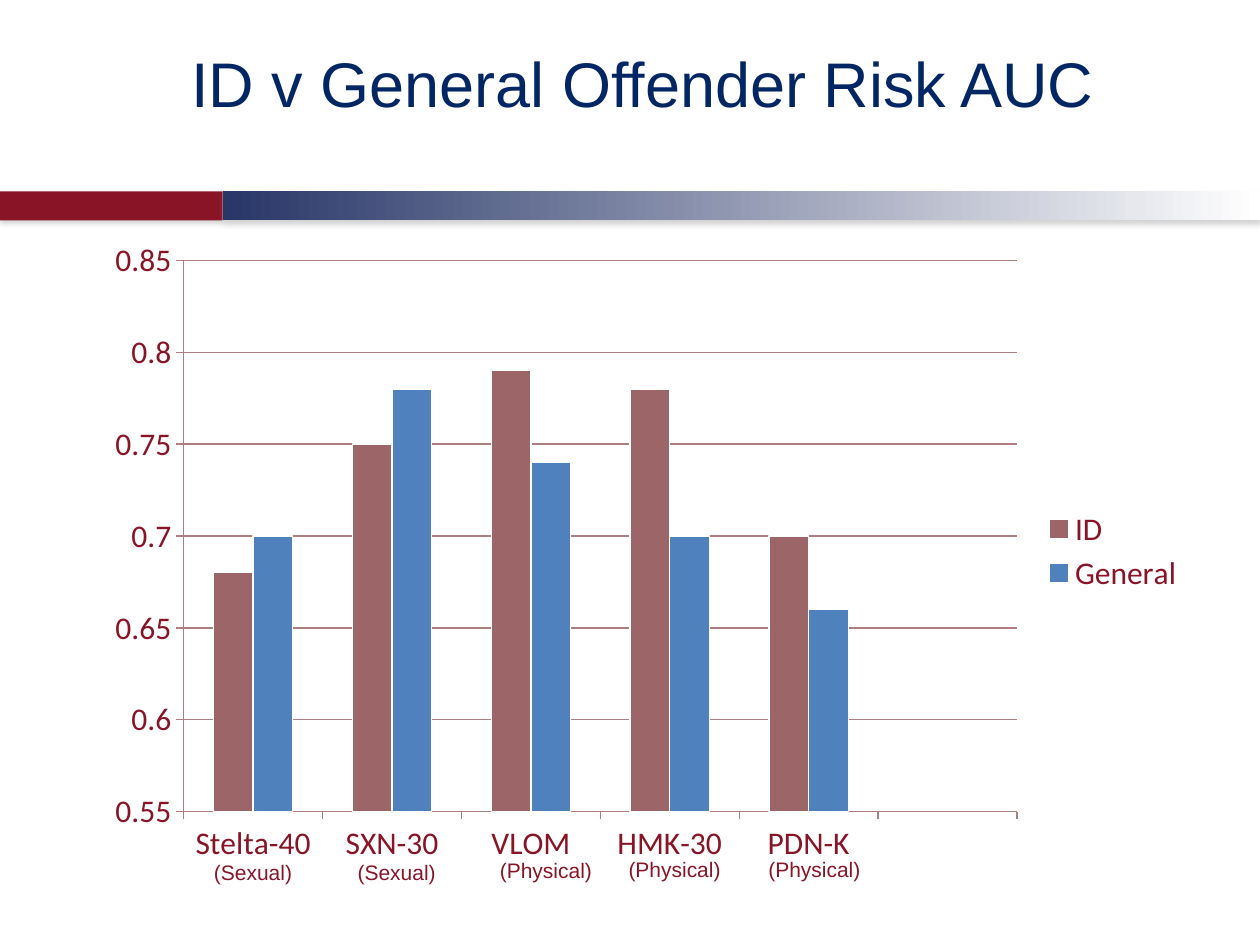
from lxml.etree import SubElement
from pptx import Presentation
from pptx.chart.data import CategoryChartData
from pptx.dml.color import RGBColor
from pptx.enum.chart import XL_CHART_TYPE, XL_LEGEND_POSITION, XL_TICK_MARK
from pptx.enum.shapes import MSO_SHAPE
from pptx.enum.text import MSO_ANCHOR, MSO_AUTO_SIZE, PP_ALIGN
from pptx.oxml.ns import qn
from pptx.util import Pt

# Content
TITLE = "ID v General Offender Risk AUC"
CATEGORIES = ["Stelta-40", "SXN-30", "VLOM", "HMK-30", "PDN-K", ""]
SERIES = [
    ("ID", "id_bar", [0.68, 0.75, 0.79, 0.78, 0.7, None]),
    ("General", "general_bar", [0.7, 0.78, 0.74, 0.7, 0.66, None]),
]
OFFENCE_NOTES = [  # text, left, top, width
    ("(Sexual)", 115.2, 487.4, 59.8),
    ("(Sexual)", 197.3, 487.4, 59.8),
    ("(Physical)", 278.6, 486.7, 67.7),
    ("(Physical)", 352.1, 486, 67.7),
    ("(Physical)", 432, 486, 67.7),
]

# Theme and geometry, in points
THEME = {
    "title": "002663", "text": "881426", "red": "891426", "navy": "283668",
    "white": "FFFFFF", "shadow": "808080", "grid": "AF7E80",
    "id_bar": "9C6567", "general_bar": "4F81BD",
    "font": "Arial", "chart_font": "Calibri",
    "title_size": 36, "chart_size": 18, "note_size": 12,
}
SLIDE_WIDTH, SLIDE_HEIGHT = 720, 540
BAND_TOP, BAND_HEIGHT, BAND_SPLIT = 109.4, 16.6, 127.2
TITLE_BOX = (36, 21.6, 662.4, 51.1)
CHART_BOX = (53.3, 130.3, 630.7, 369.4)
PLOT_AREA = {"x": 0.082, "y": 0.05, "w": 0.755, "h": 0.853}


NOTE_HEIGHT = 21.6


def color(name):
    return RGBColor.from_string(THEME[name])


def points(*lengths):
    return [Pt(length) for length in lengths]


def style_font(font, face, size, tint):
    font.name = THEME[face]
    font.size = Pt(THEME[size])
    font.color.rgb = color(tint)


def add_band(slide, left, right):
    band = slide.shapes.add_shape(
        MSO_SHAPE.RECTANGLE, *points(left, BAND_TOP, right - left, BAND_HEIGHT))
    band.line.fill.background()
    band.shadow.inherit = False
    effects = band._element.spPr.find(qn("a:effectLst"))
    shadow = SubElement(effects, qn("a:outerShdw"), blurRad=str(Pt(3.1)),
                        dist=str(Pt(1.8)), dir="5400000", rotWithShape="0")
    tint = SubElement(shadow, qn("a:srgbClr"), val=THEME["shadow"])
    SubElement(tint, qn("a:alpha"), val="35000")
    return band


def style_axis(axis):
    axis.major_tick_mark = XL_TICK_MARK.OUTSIDE
    axis.minor_tick_mark = XL_TICK_MARK.NONE
    axis.format.line.color.rgb = color("grid")
    axis.format.line.width = Pt(0.75)


def place_plot_area(chart):
    plot_area = chart._chartSpace.chart.plotArea
    for old_layout in plot_area.findall(qn("c:layout")):
        plot_area.remove(old_layout)
    layout = SubElement(plot_area, qn("c:layout"))
    plot_area.insert(0, layout)
    manual = SubElement(layout, qn("c:manualLayout"))
    settings = {"layoutTarget": "inner", "xMode": "edge", "yMode": "edge", **PLOT_AREA}
    for name, value in settings.items():
        SubElement(manual, qn(f"c:{name}"), val=str(value))


def add_risk_chart(slide):
    data = CategoryChartData()
    data.categories = CATEGORIES
    for name, _, values in SERIES:
        data.add_series(name, values)
    chart = slide.shapes.add_chart(
        XL_CHART_TYPE.COLUMN_CLUSTERED, *points(*CHART_BOX), data).chart
    chart.has_title = False
    style_font(chart.font, "chart_font", "chart_size", "text")

    # Axes and gridlines
    style_axis(chart.category_axis)
    axis = chart.value_axis
    style_axis(axis)
    axis.minimum_scale, axis.maximum_scale, axis.major_unit = 0.55, 0.85, 0.05
    axis.tick_labels.number_format = "General"
    axis.tick_labels.number_format_is_linked = False
    axis.has_major_gridlines = True
    axis.major_gridlines.format.line.color.rgb = color("grid")
    axis.major_gridlines.format.line.width = Pt(0.75)

    # Columns
    plot = chart.plots[0]
    plot.gap_width, plot.overlap = 150, 0
    plot.vary_by_categories = False
    for series, (_, tint, _) in zip(plot.series, SERIES):
        series.format.fill.solid()
        series.format.fill.fore_color.rgb = color(tint)
        series.format.line.color.rgb = color("white")
        series.format.line.width = Pt(0.75)

    # Legend and plot position
    chart.has_legend = True
    chart.legend.position = XL_LEGEND_POSITION.RIGHT
    chart.legend.include_in_layout = False
    place_plot_area(chart)


def main():
    deck = Presentation()
    deck.slide_width, deck.slide_height = points(SLIDE_WIDTH, SLIDE_HEIGHT)
    slide = deck.slides.add_slide(deck.slide_layouts[5])

    # Divider band
    red_band = add_band(slide, 0, BAND_SPLIT)
    red_band.fill.solid()
    red_band.fill.fore_color.rgb = color("red")
    fade_band = add_band(slide, BAND_SPLIT, SLIDE_WIDTH)
    fade_band.fill.gradient()
    fade_band.fill.gradient_angle = 0
    for stop, tint, position in zip(fade_band.fill.gradient_stops, ("navy", "white"), (0, 1)):
        stop.color.rgb = color(tint)
        stop.position = position

    # Title
    title = slide.shapes.title
    title.left, title.top, title.width, title.height = points(*TITLE_BOX)
    frame = title.text_frame
    frame.auto_size = MSO_AUTO_SIZE.NONE
    frame.vertical_anchor = MSO_ANCHOR.MIDDLE
    para = frame.paragraphs[0]
    para.alignment = PP_ALIGN.CENTER
    span = para.add_run()
    span.text = TITLE
    style_font(span.font, "font", "title_size", "title")

    add_risk_chart(slide)

    # Offence type under each category
    for text, left, top, width in OFFENCE_NOTES:
        box = slide.shapes.add_textbox(*points(left, top, width, NOTE_HEIGHT))
        box.text_frame.word_wrap = False
        box.text_frame.auto_size = MSO_AUTO_SIZE.SHAPE_TO_FIT_TEXT
        span = box.text_frame.paragraphs[0].add_run()
        span.text = text
        style_font(span.font, "font", "note_size", "text")

    deck.save("out.pptx")


if __name__ == "__main__":
    main()
